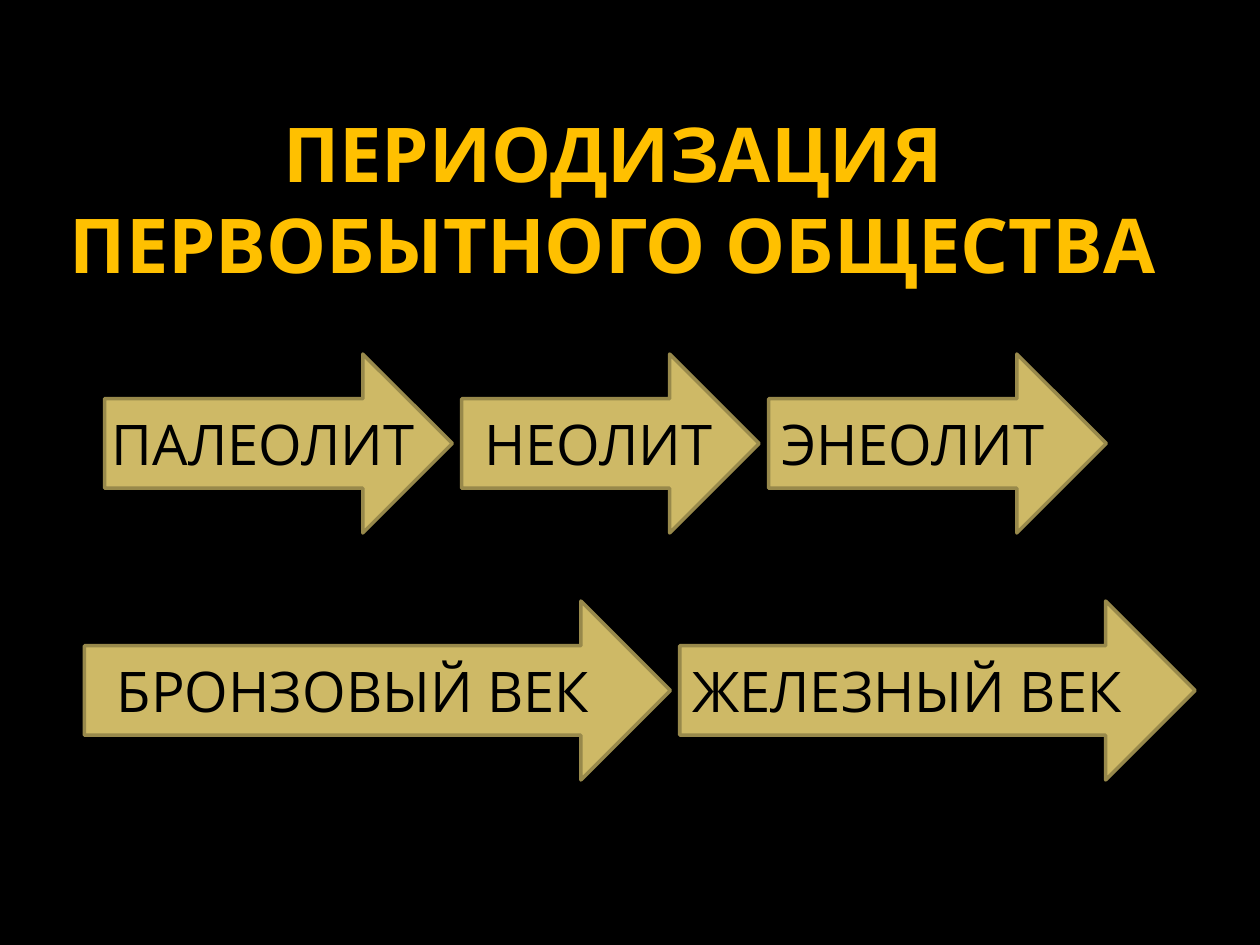
from dataclasses import dataclass

from pptx import Presentation
from pptx.dml.color import RGBColor
from pptx.enum.shapes import MSO_SHAPE
from pptx.enum.text import MSO_ANCHOR, PP_ALIGN
from pptx.slide import Slide
from pptx.text.text import TextFrame
from pptx.util import Inches, Length, Pt

ARROW = MSO_SHAPE.RIGHT_ARROW
CENTER, LEFT = PP_ALIGN.CENTER, PP_ALIGN.LEFT
BOTTOM, TOP = MSO_ANCHOR.BOTTOM, MSO_ANCHOR.TOP

COLORS = {
    "background": "000000",
    "title": "FFC000",
    "arrow": "CEB966",
    "outline": "98894B",
    "label": "000000",
}
FONT = "Open Sans"

# Square grid over the slide: 100 columns by 75 rows
COLUMNS, ROWS = 100, 75
SLIDE_WIDTH, SLIDE_HEIGHT = Inches(10), Inches(7.5)
ARROW_ROWS = 14.2
LABEL_ROWS = 6.4
ARROW_GAP = 0.75


@dataclass(frozen=True)
class Period:
    name: str
    columns: float
    label_shift: float
    label_columns: float


@dataclass(frozen=True)
class Timeline:
    left: float
    top: float
    periods: tuple[Period, ...]


TIMELINES = (
    Timeline(8.3, 28.1, (
        Period("ПАЛЕОЛИТ", 27.6, -0.4, 26.7),
        Period("НЕОЛИТ", 23.6, 0.8, 20.6),
        Period("ЭНЕОЛИТ", 26.8, 0, 23.9),
    )),
    Timeline(6.7, 47.7, (
        Period("БРОНЗОВЫЙ ВЕК", 46.5, 1.6, 40.8),
        Period("ЖЕЛЕЗНЫЙ ВЕК", 40.9, 0, 38),
    )),
)


def color(name: str) -> RGBColor:
    return RGBColor.from_string(COLORS[name])


def place(left: float, top: float, columns: float, rows: float) -> tuple[Length, ...]:
    """Turn a grid position into slide lengths."""
    column, row = SLIDE_WIDTH / COLUMNS, SLIDE_HEIGHT / ROWS
    return (Length(round(left * column)), Length(round(top * row)),
            Length(round(columns * column)), Length(round(rows * row)))


def write(frame: TextFrame, text: str, size: float, ink: str,
          alignment: PP_ALIGN, bold: bool = False) -> None:
    para = frame.paragraphs[0]
    para.alignment = alignment
    span = para.add_run()
    span.text = text
    span.font.name = FONT
    span.font.size = Pt(size)
    span.font.bold = bold
    span.font.color.rgb = color(ink)


def add_title(page: Slide) -> None:
    frame = page.shapes.add_textbox(*place(4.3, 2.9, 90, 20)).text_frame
    frame.word_wrap = True
    frame.vertical_anchor = BOTTOM
    frame.margin_left, frame.margin_right = Inches(0.05), Inches(0.18)
    frame.margin_top = frame.margin_bottom = 0
    write(frame, "ПЕРИОДИЗАЦИЯ ПЕРВОБЫТНОГО ОБЩЕСТВА", 43.2, "title", CENTER, bold=True)


def add_period(page: Slide, period: Period, left: float, top: float) -> None:
    arrow = page.shapes.add_shape(ARROW, *place(left, top, period.columns, ARROW_ROWS))
    arrow.shadow.inherit = False
    arrow.fill.solid()
    arrow.fill.fore_color.rgb = color("arrow")
    arrow.line.color.rgb = color("outline")
    arrow.line.width = Pt(2)

    label_top = top + (ARROW_ROWS - LABEL_ROWS) / 2
    label = page.shapes.add_textbox(*place(
        left + period.label_shift, label_top, period.label_columns, LABEL_ROWS))
    label.text_frame.word_wrap = False
    label.text_frame.vertical_anchor = TOP
    write(label.text_frame, period.name, 32, "label", LEFT)


def add_timeline(page: Slide, timeline: Timeline) -> None:
    left = timeline.left
    for period in timeline.periods:
        add_period(page, period, left, timeline.top)
        left += period.columns + ARROW_GAP


def main() -> None:
    deck = Presentation()
    deck.slide_width, deck.slide_height = SLIDE_WIDTH, SLIDE_HEIGHT
    page = deck.slides.add_slide(deck.slide_layouts[6])
    page.background.fill.solid()
    page.background.fill.fore_color.rgb = color("background")
    add_title(page)
    for timeline in TIMELINES:
        add_timeline(page, timeline)
    deck.save("out.pptx")


if __name__ == "__main__":
    main()
